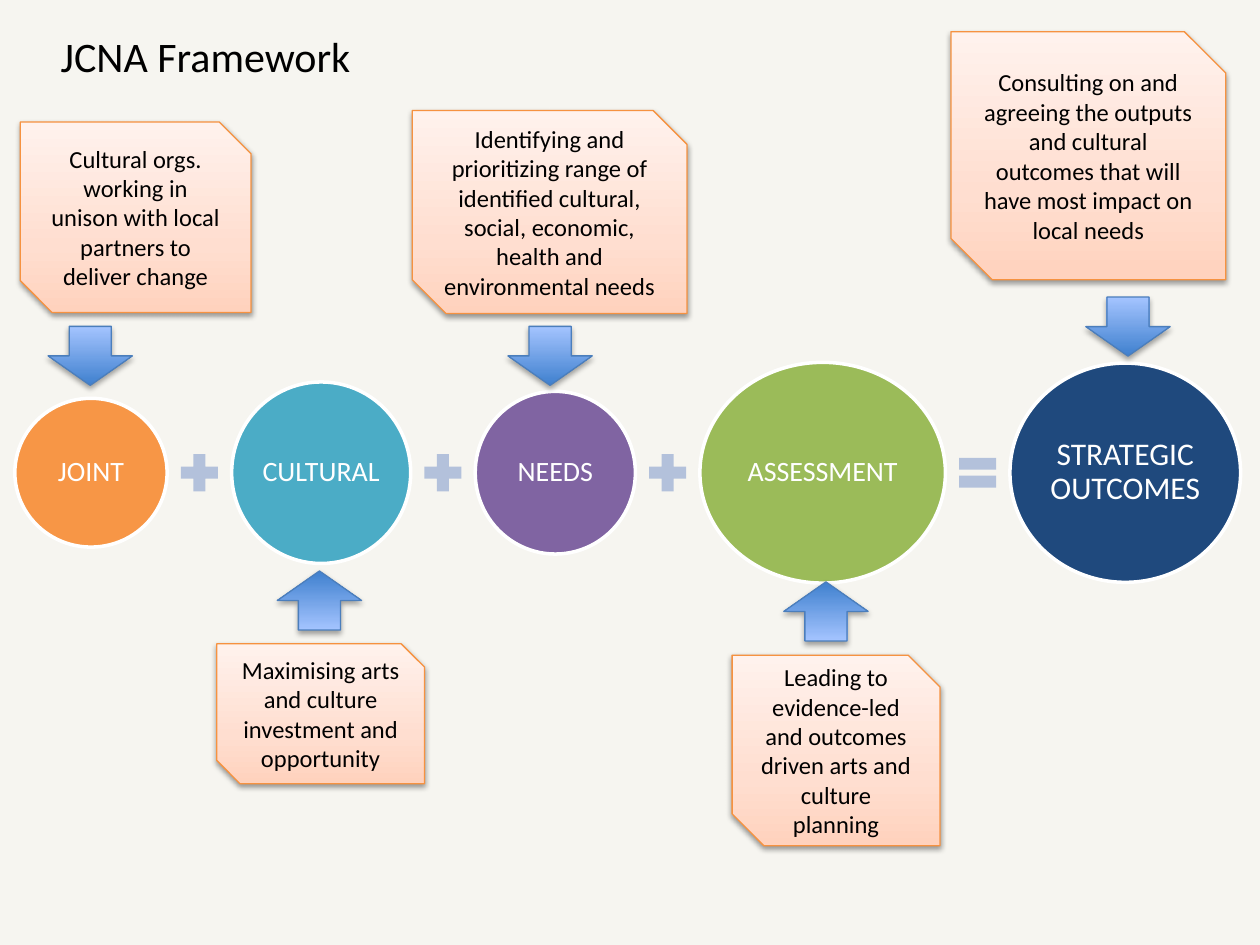
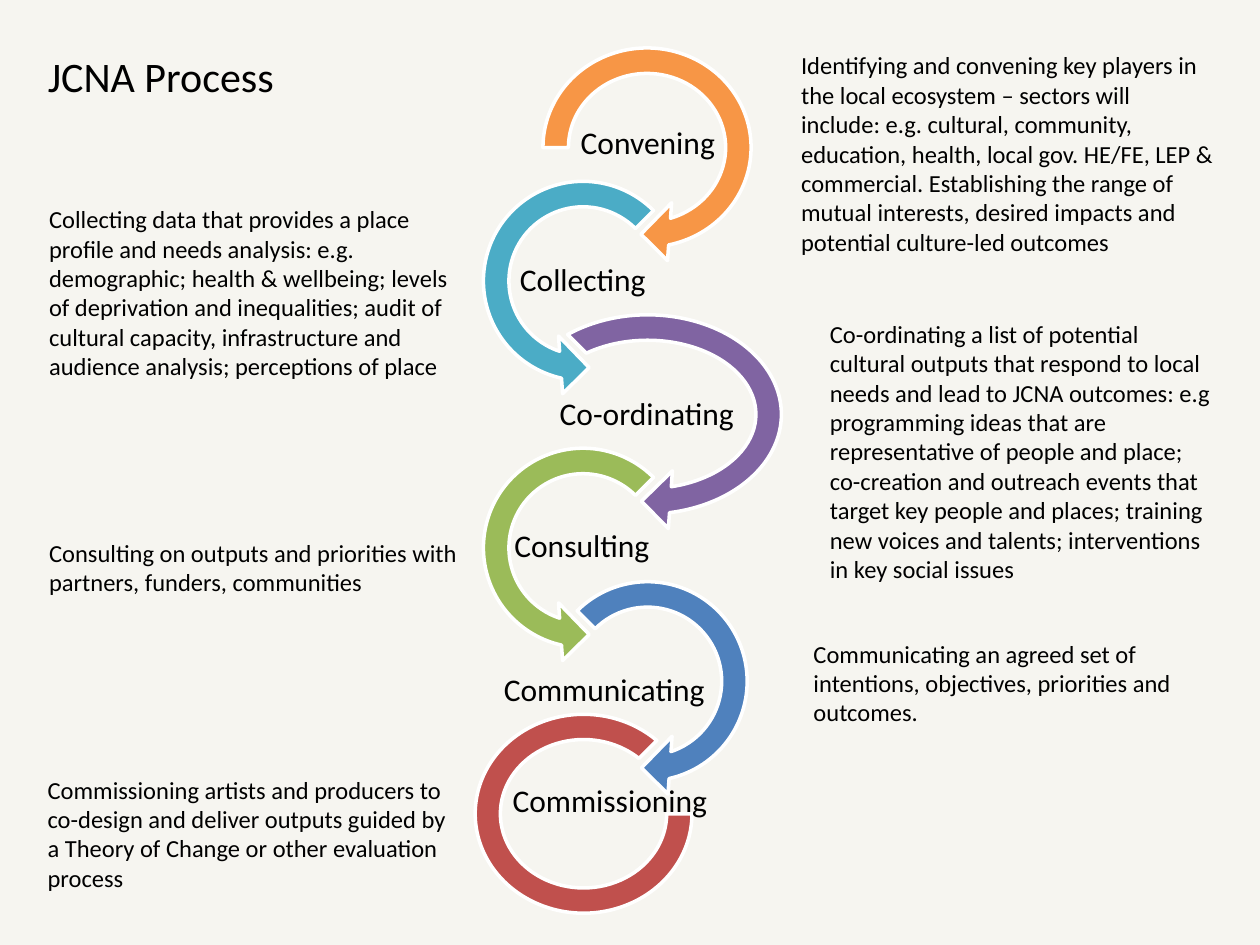
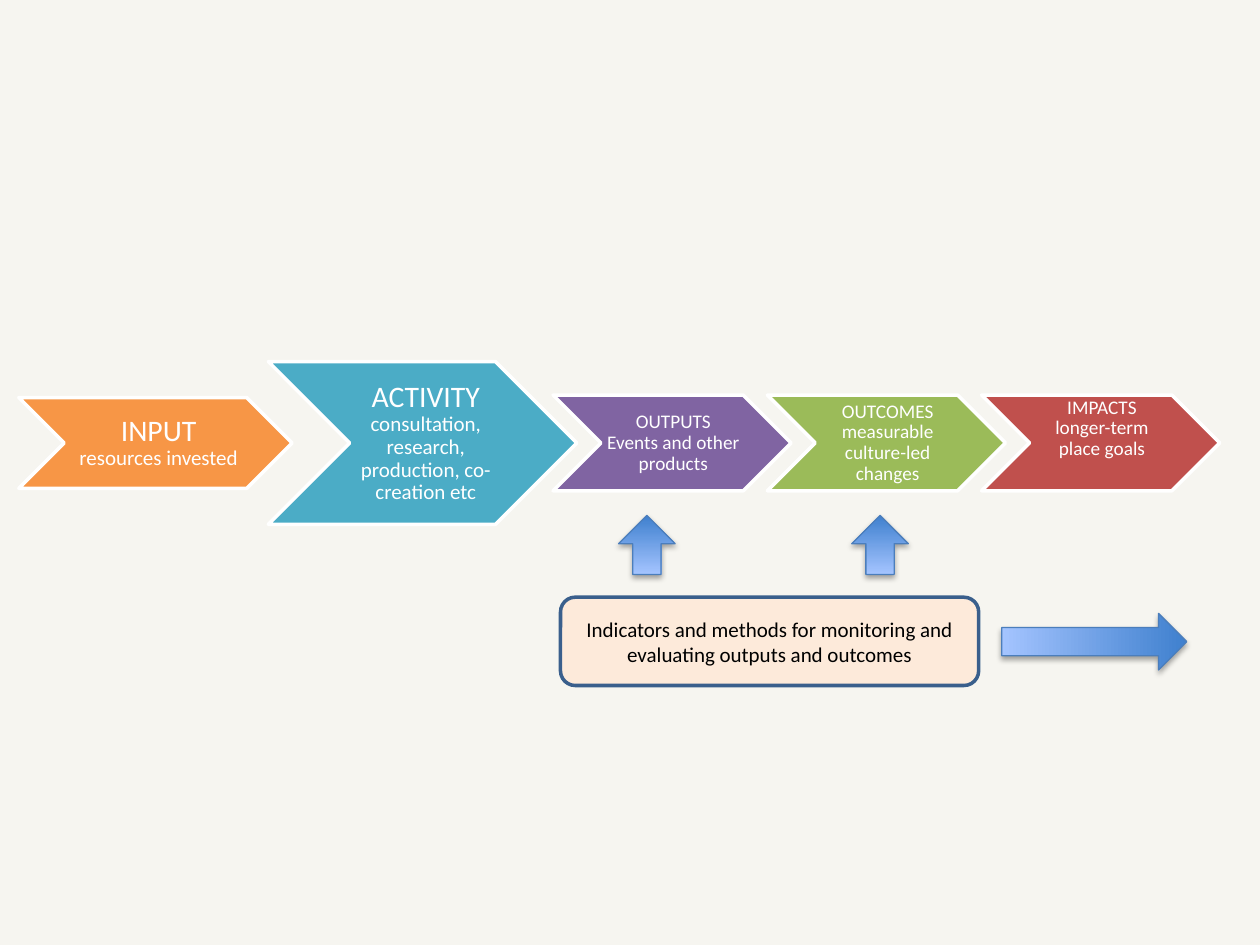
"""Build the three JCNA slides: framework, process and logic chain."""
from dataclasses import dataclass
from typing import NamedTuple, Optional

from lxml import etree
from pptx import Presentation
from pptx.dml.color import RGBColor
from pptx.enum.shapes import MSO_SHAPE
from pptx.enum.text import MSO_ANCHOR, MSO_AUTO_SIZE, PP_ALIGN
from pptx.oxml.ns import qn
from pptx.presentation import Presentation as Deck
from pptx.shapes.autoshape import Shape
from pptx.slide import Slide
from pptx.text.text import TextFrame
from pptx.util import Cm, Pt

ELLIPSE = MSO_SHAPE.OVAL
PLUS = MSO_SHAPE.MATH_PLUS
EQUAL = MSO_SHAPE.MATH_EQUAL
SNIPPED = MSO_SHAPE.SNIP_2_DIAG_RECTANGLE
ROUNDED = MSO_SHAPE.ROUNDED_RECTANGLE
DOWN_ARROW = MSO_SHAPE.DOWN_ARROW
CHEVRON = MSO_SHAPE.CHEVRON
RIGHT_TURN = MSO_SHAPE.CIRCULAR_ARROW
LEFT_TURN = MSO_SHAPE.LEFT_CIRCULAR_ARROW
BLOCK_ARC = MSO_SHAPE.BLOCK_ARC
LEFT = PP_ALIGN.LEFT
CENTER = PP_ALIGN.CENTER
TOP = MSO_ANCHOR.TOP
MIDDLE = MSO_ANCHOR.MIDDLE
NO_AUTOFIT = MSO_AUTO_SIZE.NONE

FONT = "Calibri"
BLACK = RGBColor(0x00, 0x00, 0x00)
WHITE = RGBColor(0xFF, 0xFF, 0xFF)
PAPER = RGBColor(0xF6, 0xF5, 0xF0)
ORANGE = RGBColor(0xF7, 0x96, 0x46)
TEAL = RGBColor(0x4B, 0xAC, 0xC6)
PURPLE = RGBColor(0x80, 0x64, 0xA2)
GREEN = RGBColor(0x9B, 0xBB, 0x59)
BLUE = RGBColor(0x4F, 0x81, 0xBD)
RED = RGBColor(0xC0, 0x50, 0x4D)
NAVY = RGBColor(0x1F, 0x49, 0x7D)
SYMBOL_BLUE = RGBColor(0xB3, 0xC1, 0xDB)
CALLOUT_EDGE = RGBColor(0xF6, 0x92, 0x40)
ARROW_EDGE = RGBColor(0x4B, 0x7E, 0xBC)
INDICATOR_FILL = RGBColor(0xFD, 0xEA, 0xDA)
INDICATOR_EDGE = RGBColor(0x3A, 0x5F, 0x8C)
PEACH_STOPS = {0: RGBColor(0xFF, 0xD2, 0xBD), 35: RGBColor(0xFF, 0xDE, 0xD0),
               100: RGBColor(0xFF, 0xF2, 0xED)}
BLUE_STOPS = {0: RGBColor(0x3F, 0x80, 0xCE), 100: RGBColor(0xA4, 0xC4, 0xFF)}

TITLE_ONLY, BLANK = 5, 6
TURN_ADJUSTMENTS = (0.11, 11.42, 45, 135, 0.125)
LEFT_TURN_ADJUSTMENTS = (0.11, 11.42, 63, 189, 0.125)


class Box(NamedTuple):
    """Position and size in centimetres."""
    left: float
    top: float
    width: float
    height: float


class Words(NamedTuple):
    """One line of text with its size in points."""
    text: str
    size: float


class Callout(NamedTuple):
    """A snipped note on the framework slide."""
    box: Box
    text: str


class BlockArrow(NamedTuple):
    """A gradient arrow that points down before it is rotated."""
    box: Box
    rotation: int = 0


@dataclass(frozen=True)
class Term:
    """A circle of the framework and the symbol after it."""
    text: str
    colour: RGBColor
    width: float
    height: float
    symbol: Optional[MSO_SHAPE] = PLUS
    size: float = 16


@dataclass(frozen=True)
class Stage:
    """A curved arrow of the process with its label and description."""
    label: str
    label_box: Box
    colour: RGBColor
    preset: MSO_SHAPE
    adjustments: tuple[float, ...]
    box: Box
    description: str
    description_box: Box


@dataclass(frozen=True)
class Link:
    """A chevron of the logic chain."""
    heading: Words
    detail: Words
    colour: RGBColor
    width: float
    height: float
    left_inset: float = 0.1
    anchor: MSO_ANCHOR = MIDDLE


TERM_START, TERM_GAP, TERM_CENTRE, SYMBOL_SIZE = 0.3, 0.14, 9.53, 1.02
TERMS = (
    Term("JOINT", ORANGE, 3.07, 3.0),
    Term("CULTURAL", TEAL, 3.61, 3.66),
    Term("NEEDS", PURPLE, 3.23, 3.28),
    Term("ASSESSMENT", GREEN, 4.95, 4.45, EQUAL),
    Term("STRATEGIC OUTCOMES", NAVY, 4.65, 4.42, None, 18),
)
CALLOUTS = (
    Callout(Box(0.41, 2.46, 4.65, 3.84),
            "Cultural orgs. working in unison with local partners to deliver change"),
    Callout(Box(4.37, 12.98, 4.19, 2.82),
            "Maximising arts and culture investment and opportunity"),
    Callout(Box(8.31, 2.23, 5.54, 4.09),
            "Identifying and prioritizing range of identified cultural, social, "
            "economic, health and environmental needs"),
    Callout(Box(14.76, 13.21, 4.19, 3.84),
            "Leading to evidence-led and outcomes driven arts and culture planning"),
    Callout(Box(19.17, 0.64, 5.54, 5.0),
            "Consulting on and agreeing the outputs and cultural outcomes that "
            "will have most impact on local needs"),
)
FRAMEWORK_ARROWS = (
    BlockArrow(Box(0.97, 6.58, 1.7, 1.19)),
    BlockArrow(Box(10.24, 6.58, 1.7, 1.19)),
    BlockArrow(Box(21.89, 5.99, 1.7, 1.19)),
    BlockArrow(Box(5.59, 11.51, 1.7, 1.19), 180),
    BlockArrow(Box(15.8, 11.73, 1.7, 1.19), 180),
)

TURN_TOP, TURN_PITCH, TURN_SIZE, LABEL_HEIGHT = 0.64, 2.69, 4.67, 1.3


def turn_box(row: int, left: float, width: float = TURN_SIZE) -> Box:
    """Return the box of the curved arrow in a row."""
    return Box(left, TURN_TOP + row * TURN_PITCH, width, TURN_SIZE)


STAGES = (
    Stage("Convening", Box(11.23, 2.26, 3.66, LABEL_HEIGHT), ORANGE,
          RIGHT_TURN, (0.11, 11.42, 45, 108, 0.125), turn_box(0, 10.62, 4.85),
          "Identifying and convening key players in the local ecosystem – "
          "sectors will include: e.g. cultural, community, education, health, "
          "local gov. HE/FE, LEP & commercial. Establishing the range of mutual "
          "interests, desired impacts and potential culture-led outcomes",
          Box(15.9, 0.89, 8.84, 4.45)),
    Stage("Collecting", Box(10.44, 5.03, 2.62, LABEL_HEIGHT), TEAL,
          LEFT_TURN, LEFT_TURN_ADJUSTMENTS, turn_box(1, 9.42),
          "Collecting data that provides a place profile and needs analysis: "
          "e.g. demographic; health & wellbeing; levels of deprivation and "
          "inequalities; audit of cultural capacity, infrastructure and "
          "audience analysis; perceptions of place",
          Box(0.74, 3.99, 8.76, 3.84)),
    Stage("Co-ordinating", Box(11.2, 7.72, 3.68, LABEL_HEIGHT), PURPLE,
          RIGHT_TURN, TURN_ADJUSTMENTS, turn_box(2, 10.03, 6.05),
          "Co-ordinating a list of potential cultural outputs that respond to "
          "local needs and lead to JCNA outcomes: e.g programming ideas that "
          "are representative of people and place; co-creation and outreach "
          "events that target key people and places; training new voices and "
          "talents; interventions in key social issues",
          Box(16.48, 6.3, 8.18, 5.64)),
    Stage("Consulting", Box(10.13, 10.39, 3.2, LABEL_HEIGHT), GREEN,
          LEFT_TURN, LEFT_TURN_ADJUSTMENTS, turn_box(3, 9.42),
          "Consulting on outputs and priorities with partners, funders, "
          "communities",
          Box(0.74, 10.72, 8.84, 1.45)),
    Stage("Communicating", Box(9.78, 13.28, 4.8, LABEL_HEIGHT), BLUE,
          RIGHT_TURN, TURN_ADJUSTMENTS, turn_box(4, 10.72),
          "Communicating an agreed set of intentions, objectives, priorities "
          "and outcomes.",
          Box(16.15, 12.75, 8.84, 2.06)),
    Stage("Commissioning", Box(10.11, 15.52, 4.37, LABEL_HEIGHT), RED,
          BLOCK_ARC, (0, 189, 0.127), Box(9.58, 14.4, 4.37, 4.01),
          "Commissioning artists and producers to co-design and deliver outputs "
          "guided by a Theory of Change or other evaluation process",
          Box(0.71, 15.49, 8.84, 2.64)),
)

LINK_START, LINK_OVERLAP, LINK_CENTRE = 0.38, 0.48, 8.93
LINKS = (
    Link(Words("INPUT", 17), Words("resources invested", 12), ORANGE,
         5.51, 1.83, 0.18),
    Link(Words("ACTIVITY", 17),
         Words("consultation, research, production, co-creation etc", 12), TEAL,
         6.22, 3.28, 0.18),
    Link(Words("OUTPUTS", 11), Words("Events and other products", 11), PURPLE,
         4.8, 1.93),
    Link(Words("OUTCOMES", 11), Words("measurable culture-led changes", 11), GREEN,
         4.8, 1.93),
    Link(Words("IMPACTS", 11), Words("longer-term place goals", 11), RED,
         4.8, 1.93, anchor=TOP),
)
CHAIN_ARROWS = (
    BlockArrow(Box(17.17, 10.39, 1.14, 1.19), 180),
    BlockArrow(Box(12.47, 10.39, 1.14, 1.19), 180),
    BlockArrow(Box(21.49, 11.07, 1.14, 3.73), 270),
)


def lengths(box: Box) -> tuple[Cm, ...]:
    """Convert a box to slide lengths."""
    return tuple(Cm(value) for value in box)


def set_insets(frame: TextFrame, left: float, other: float) -> None:
    """Set the left inset and the three other insets."""
    frame.margin_left = Cm(left)
    frame.margin_right = frame.margin_top = frame.margin_bottom = Cm(other)


def write(frame: TextFrame, lines: tuple[Words, ...], colour: RGBColor = BLACK,
          alignment: PP_ALIGN = CENTER, anchor: MSO_ANCHOR = MIDDLE,
          spacing: float = 1.0) -> None:
    """Fill a text frame with one paragraph per line."""
    frame.word_wrap = True
    frame.auto_size = NO_AUTOFIT
    frame.vertical_anchor = anchor
    for index, words in enumerate(lines):
        paragraph = frame.add_paragraph() if index else frame.paragraphs[0]
        paragraph.alignment = alignment
        paragraph.line_spacing = spacing
        run = paragraph.add_run()
        run.text = words.text
        run.font.name = FONT
        run.font.size = Pt(words.size)
        run.font.color.rgb = colour


def add_figure(slide: Slide, preset: MSO_SHAPE, box: Box,
               fill: Optional[RGBColor] = None, edge: Optional[RGBColor] = WHITE,
               edge_width: float = 2) -> Shape:
    """Add a preset shape with a plain fill and outline and no shadow."""
    shape = slide.shapes.add_shape(preset, *lengths(box))
    shape.shadow.inherit = False
    if fill is not None:
        shape.fill.solid()
        shape.fill.fore_color.rgb = fill
    if edge is None:
        shape.line.fill.background()
    else:
        shape.line.color.rgb = edge
        shape.line.width = Pt(edge_width)
    return shape


def add_raised(slide: Slide, preset: MSO_SHAPE, box: Box,
               stops: dict[int, RGBColor], edge: RGBColor,
               opacity: int, distance: float) -> Shape:
    """Add a shape with an upward gradient and a soft shadow below."""
    shape = add_figure(slide, preset, box, edge=edge, edge_width=0.75)
    shape.fill.gradient()
    shape.fill.gradient_angle = 90
    properties = shape.element.spPr
    stop_list = properties.find(".//" + qn("a:gsLst"))
    for stop in list(stop_list):
        stop_list.remove(stop)
    for position, colour in stops.items():
        stop = etree.SubElement(stop_list, qn("a:gs"), pos=str(position * 1000))
        etree.SubElement(stop, qn("a:srgbClr"), val=str(colour))
    shadow = etree.SubElement(
        properties.find(qn("a:effectLst")), qn("a:outerShdw"),
        blurRad=str(Pt(3.15)), dist=str(Pt(distance)), dir="5400000",
        rotWithShape="0")
    shade = etree.SubElement(shadow, qn("a:srgbClr"), val=str(BLACK))
    etree.SubElement(shade, qn("a:alpha"), val=str(opacity * 1000))
    return shape


def add_arrows(slide: Slide, arrows: tuple[BlockArrow, ...]) -> None:
    """Add the blue gradient arrows of a slide."""
    for arrow in arrows:
        shape = add_raised(slide, DOWN_ARROW, arrow.box, BLUE_STOPS,
                           ARROW_EDGE, 35, 1.8)
        shape.rotation = arrow.rotation


def add_titled_slide(presentation: Deck, title: str, box: Box) -> Slide:
    """Add a slide with a left-aligned title."""
    slide = presentation.slides.add_slide(presentation.slide_layouts[TITLE_ONLY])
    shape = slide.shapes.title
    shape.left, shape.top, shape.width, shape.height = lengths(box)
    write(shape.text_frame, (Words(title, 24),), alignment=LEFT, anchor=TOP)
    return slide


def build_framework(presentation: Deck) -> None:
    """Build the equation of circles with its callouts."""
    slide = add_titled_slide(presentation, "JCNA Framework",
                             Box(0.97, 0.48, 6.4, 1.27))
    left = TERM_START
    for term in TERMS:
        circle = add_figure(slide, ELLIPSE,
                            Box(left, TERM_CENTRE - term.height / 2,
                                term.width, term.height), term.colour)
        set_insets(circle.text_frame, 0.05, 0.05)
        write(circle.text_frame, (Words(term.text, term.size),), WHITE, spacing=0.9)
        left += term.width + TERM_GAP
        if term.symbol is not None:
            add_figure(slide, term.symbol,
                       Box(left, TERM_CENTRE - SYMBOL_SIZE / 2,
                           SYMBOL_SIZE, SYMBOL_SIZE), SYMBOL_BLUE, None)
            left += SYMBOL_SIZE + TERM_GAP
    for callout in CALLOUTS:
        note = add_raised(slide, SNIPPED, callout.box, PEACH_STOPS,
                          CALLOUT_EDGE, 38, 1.6)
        write(note.text_frame, (Words(callout.text, 14),))
    add_arrows(slide, FRAMEWORK_ARROWS)


def build_process(presentation: Deck) -> None:
    """Build the chain of curved arrows with descriptions."""
    slide = add_titled_slide(presentation, "JCNA Process",
                             Box(0.71, 0.89, 5.11, 1.27))
    for stage in STAGES:
        turn = add_figure(slide, stage.preset, stage.box, stage.colour)
        for index, value in enumerate(stage.adjustments):
            turn.adjustments[index] = value
        label = slide.shapes.add_textbox(*lengths(stage.label_box))
        set_insets(label.text_frame, 0.03, 0.03)
        write(label.text_frame, (Words(stage.label, 18),), spacing=0.9)
    for stage in STAGES:
        description = slide.shapes.add_textbox(*lengths(stage.description_box))
        write(description.text_frame, (Words(stage.description, 14),),
              alignment=LEFT, anchor=TOP)


def build_chain(presentation: Deck) -> None:
    """Build the chevrons from input to impacts and the indicator box."""
    slide = presentation.slides.add_slide(presentation.slide_layouts[BLANK])
    indicators = add_figure(slide, ROUNDED, Box(11.3, 12.04, 8.43, 1.78),
                            INDICATOR_FILL, INDICATOR_EDGE)
    write(indicators.text_frame,
          (Words("Indicators and methods for monitoring and evaluating outputs "
                 "and outcomes", 12),))
    add_arrows(slide, CHAIN_ARROWS)
    left = LINK_START
    for link in LINKS:
        chevron = add_figure(slide, CHEVRON,
                             Box(left, LINK_CENTRE - link.height / 2,
                                 link.width, link.height), link.colour)
        set_insets(chevron.text_frame, link.left_inset, 0.05)
        write(chevron.text_frame, (link.heading, link.detail), WHITE,
              anchor=link.anchor, spacing=0.9)
        left += link.width - LINK_OVERLAP


def main() -> None:
    """Create the presentation and save it."""
    presentation = Presentation()
    presentation.slide_width = Cm(25.4)
    presentation.slide_height = Cm(19.05)
    background = presentation.slide_master.background.fill
    background.solid()
    background.fore_color.rgb = PAPER
    build_framework(presentation)
    build_process(presentation)
    build_chain(presentation)
    presentation.save("out.pptx")


if __name__ == "__main__":
    main()
